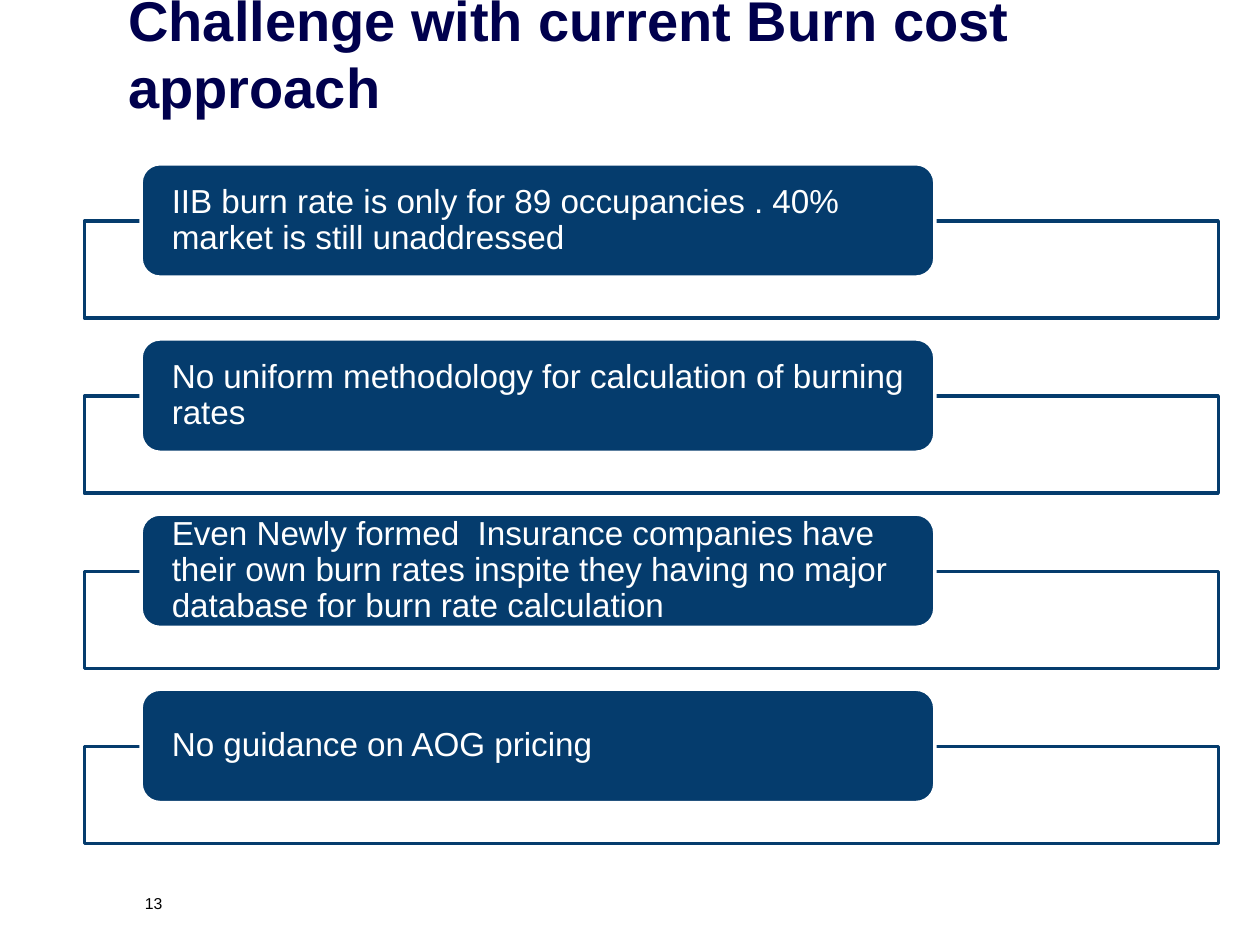
from lxml import etree
from pptx import Presentation
from pptx.dml.color import RGBColor
from pptx.enum.shapes import MSO_SHAPE
from pptx.enum.text import MSO_ANCHOR, PP_ALIGN
from pptx.oxml.ns import qn
from pptx.util import Inches, Pt

RECT, ROUNDED = MSO_SHAPE.RECTANGLE, MSO_SHAPE.ROUNDED_RECTANGLE
BOTTOM, MIDDLE, TOP = MSO_ANCHOR.BOTTOM, MSO_ANCHOR.MIDDLE, MSO_ANCHOR.TOP
LEFT, RIGHT = PP_ALIGN.LEFT, PP_ALIGN.RIGHT

COLORS = {"title": "00004D", "blue": "053C6D", "white": "FFFFFF", "black": "000000"}
CHALLENGES = [
    "IIB burn rate is only for 89 occupancies . 40% market is still unaddressed",
    "No uniform methodology for calculation of burning rates",
    "Even Newly formed  Insurance companies have their own burn rates inspite "
    "they having no major database for burn rate calculation",
    "No guidance on AOG pricing",
]
FIRST_TOP, PITCH = 1.3, 1.39


def color(name):
    """Return the named palette colour."""
    return RGBColor.from_string(COLORS[name])


def write_text(sp, text, size, font_color, margins, anchor, align=LEFT, bold=False,
               wrap=True, spacing=None):
    """Write one formatted paragraph into a shape."""
    tf = sp.text_frame
    frame = {"word_wrap": wrap, "vertical_anchor": anchor}
    frame.update(zip(("margin_left", "margin_top", "margin_right", "margin_bottom"),
                     (Inches(m) for m in margins)))
    for name, value in frame.items():
        setattr(tf, name, value)
    p = tf.paragraphs[0]
    p.alignment, p.line_spacing = align, spacing
    r = p.add_run()
    r.text = text
    for name, value in {"name": "Arial", "size": Pt(size), "bold": bold}.items():
        setattr(r.font, name, value)
    r.font.color.rgb = color(font_color)


def add_text(s, box, text, size, font_color, **fmt):
    """Add a text box."""
    sp = s.shapes.add_textbox(*map(Inches, box))
    write_text(sp, text, size, font_color, **fmt)


def add_box(s, kind, box, fill, line, opacity=100):
    """Add a filled and outlined shape."""
    sp = s.shapes.add_shape(kind, *map(Inches, box))
    sp.shadow.inherit = False
    sp.fill.solid()
    sp.fill.fore_color.rgb = color(fill)
    sp.line.color.rgb = color(line)
    sp.line.width = Pt(2)
    if opacity < 100:
        clr = sp.fill._xPr.find(qn("a:solidFill"))[0]
        etree.SubElement(clr, qn("a:alpha")).set("val", str(opacity * 1000))
    return sp


def add_challenge(s, top, text):
    """Add a label that overlaps the top edge of an outlined panel."""
    add_box(s, RECT, (0.67, top + 0.455, 9, 0.77), "white", "blue", opacity=90)
    label = add_box(s, ROUNDED, (1.12, top, 6.3, 0.9), "blue", "white")
    write_text(label, text, 19, "white", margins=(0.2, 0, 0.2, 0), anchor=MIDDLE,
               spacing=0.9)


def main():
    """Build and save the slide."""
    prs = Presentation()
    prs.slide_width, prs.slide_height = Inches(10), Inches(7.5)
    s = prs.slides.add_slide(prs.slide_layouts[6])
    add_text(s, (1.08, 7.09, 0.21, 0.15), "13", 9, "black", margins=(0, 0, 0, 0),
             anchor=TOP, align=RIGHT, wrap=False)
    add_text(s, (0.92, 0.25, 9.02, 0.75), "Challenge with current Burn cost approach",
             32, "title", margins=(0.1, 0.05, 0.1, 0.05), anchor=BOTTOM, bold=True)
    for i, text in enumerate(CHALLENGES):
        add_challenge(s, FIRST_TOP + i * PITCH, text)
    prs.save("out.pptx")


if __name__ == "__main__":
    main()
